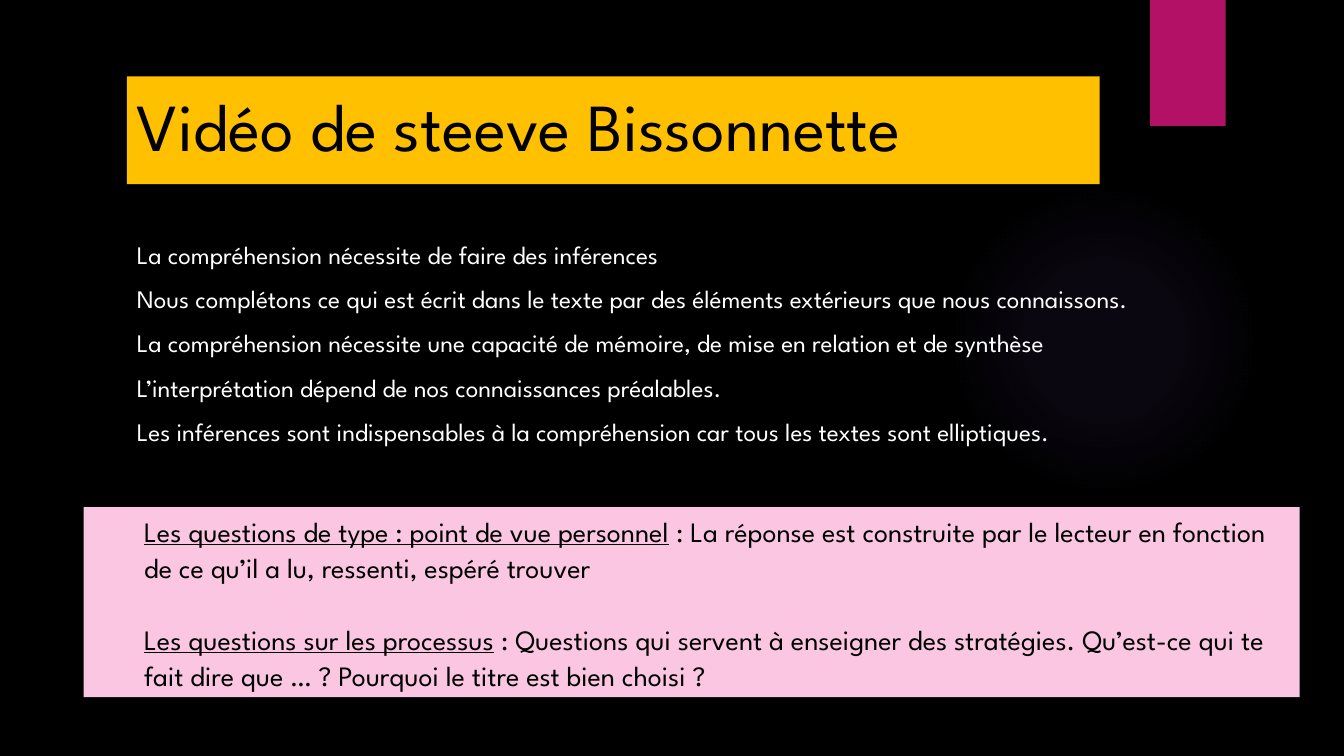
from lxml import etree
from pptx import Presentation
from pptx.dml.color import RGBColor
from pptx.enum.shapes import MSO_SHAPE
from pptx.enum.text import MSO_ANCHOR, PP_ALIGN
from pptx.oxml.ns import nsdecls
from pptx.util import Pt

RECTANGLE, OVAL = MSO_SHAPE.RECTANGLE, MSO_SHAPE.OVAL
TOP, MIDDLE = MSO_ANCHOR.TOP, MSO_ANCHOR.MIDDLE
LEFT = PP_ALIGN.LEFT
FONT = "League Spartan"
BLACK, WHITE, AMBER, MAGENTA, PINK, VIOLET = (
    "000000", "FFFFFF", "FFC000", "B31166", "FAC6E1", "9B6BF2")
GLOW_STOPS = [(0, 7), (36, 6), (69, 0)]
IDEAS = [
    "La compréhension nécessite de faire des inférences",
    "Nous complétons ce qui est écrit dans le texte par des éléments extérieurs que nous connaissons.",
    "La compréhension nécessite une capacité de mémoire, de mise en relation et de synthèse",
    "L’interprétation dépend de nos connaissances préalables.",
    "Les inférences sont indispensables à la compréhension car tous les textes sont elliptiques.",
]
QUESTION_TYPES = [
    ("Les questions de type : point de vue personnel",
     " : La réponse est construite par le lecteur en fonction de ce qu’il a lu, ressenti, espéré trouver"),
    ("Les questions sur les processus",
     " : Questions qui servent à enseigner des stratégies. Qu’est-ce qui te fait dire que … ? "
     "Pourquoi le titre est bien choisi ?"),
]


def color(hex_string):
    """Turn a hex string into a colour."""
    return RGBColor.from_string(hex_string)


def add_panel(slide, box, fill=None, outline=RECTANGLE):
    """Add a borderless shape, filled when a colour is given."""
    panel = slide.shapes.add_shape(outline, *(Pt(length) for length in box))
    panel.shadow.inherit = False
    panel.line.fill.background()
    if fill:
        panel.fill.solid()
        panel.fill.fore_color.rgb = color(fill)
    return panel


def write(frame, paragraphs, size, ink, anchor=TOP, gap=0, spacing=1.0, inset_left=7.2, inset_top=3.6):
    """Write paragraphs given as lists of (text, underlined) runs."""
    frame.word_wrap = True
    frame.vertical_anchor = anchor
    frame.margin_left, frame.margin_top = Pt(inset_left), Pt(inset_top)
    for index, runs in enumerate(paragraphs):
        paragraph = frame.add_paragraph() if index else frame.paragraphs[0]
        paragraph.alignment = LEFT
        paragraph.line_spacing = spacing
        paragraph.space_before = Pt(gap if index else 0)
        for text, underlined in runs:
            run = paragraph.add_run()
            run.text = text
            run.font.name, run.font.size = FONT, Pt(size)
            run.font.underline = underlined
            run.font.color.rgb = color(ink)


def add_decor(slide, glow_box, tab_box):
    """Add the soft violet glow and the magenta tab."""
    glow = add_panel(slide, glow_box, VIOLET, OVAL)
    stops = "".join(
        f'<a:gs pos="{position * 1000}"><a:srgbClr val="{VIOLET}">'
        f'<a:alpha val="{opacity * 1000}"/></a:srgbClr></a:gs>'
        for position, opacity in GLOW_STOPS)
    gradient = etree.fromstring(
        f'<a:gradFill {nsdecls("a")} rotWithShape="1"><a:gsLst>{stops}</a:gsLst>'
        '<a:path path="circle"><a:fillToRect l="50000" t="50000" r="50000" b="50000"/>'
        '</a:path></a:gradFill>')
    properties = glow.element.spPr
    properties.replace(properties.find("{*}solidFill"), gradient)
    add_panel(slide, tab_box, MAGENTA)


def add_title(slide, box):
    """Add the title on its amber band."""
    band = add_panel(slide, box, AMBER)
    write(band.text_frame, [[("Vidéo de steeve Bissonnette", False)]], 48, BLACK, MIDDLE, spacing=0.9)


def add_ideas(slide, box):
    """Add the list of key ideas."""
    ideas = slide.shapes.add_textbox(*(Pt(length) for length in box))
    write(ideas.text_frame, [[(idea, False)] for idea in IDEAS], 18, WHITE, MIDDLE, gap=10, inset_top=13.6)


def add_question_types(slide, box):
    """Add the pink panel defining the question types."""
    panel = add_panel(slide, box, PINK)
    paragraphs = [[(term, True), (meaning, False)] for term, meaning in QUESTION_TYPES]
    write(panel.text_frame, paragraphs, 20, BLACK, gap=25.7, spacing=1.07, inset_left=43.2)


def main():
    """Build and save the slide."""
    deck = Presentation()
    deck.slide_width, deck.slide_height = Pt(960), Pt(540)
    slide = deck.slides.add_slide(deck.slide_layouts[6])
    slide.background.fill.solid()
    slide.background.fill.fore_color.rgb = color(BLACK)
    add_decor(slide, (677.5, 131.8, 221.8, 221.8), (821.5, 0, 54, 90))
    add_title(slide, (90.7, 54.5, 694.8, 77))
    add_ideas(slide, (90.7, 131.8, 809.3, 216))
    add_question_types(slide, (59.8, 362.2, 868.5, 135.8))
    deck.save("out.pptx")


if __name__ == "__main__":
    main()
